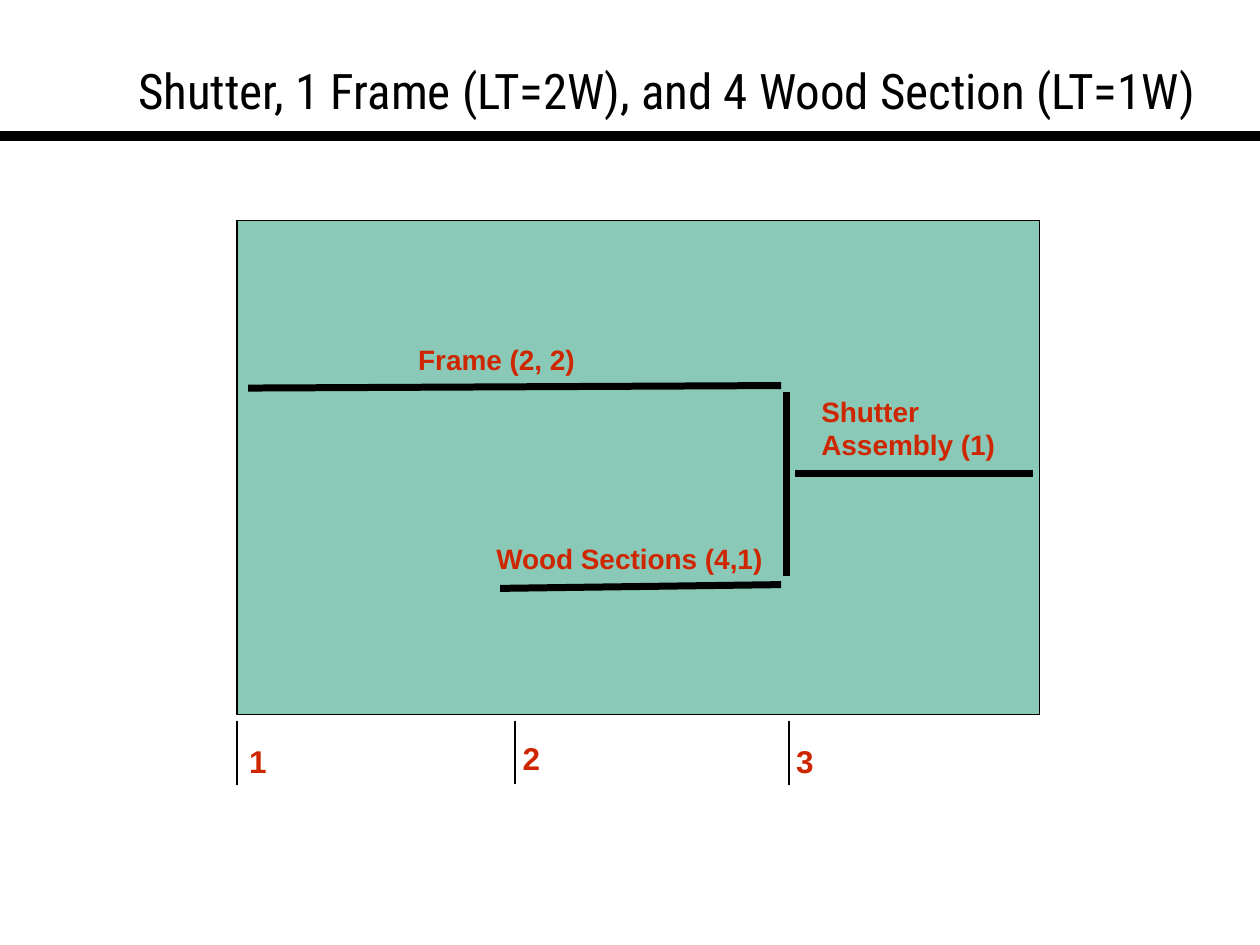
from lxml import etree
from pptx import Presentation
from pptx import util as u
from pptx.dml.color import RGBColor
from pptx.enum import shapes, text
from pptx.oxml.ns import qn

THEME = {
    "black": RGBColor.from_string("000000"),
    "panel": RGBColor.from_string("8AC8B8"),
    "label": RGBColor.from_string("CE2700"),
    "title_font": "Roboto Condensed",
    "label_font": "Arial",
    "title_size": 28,
    "label_size": 16,
    "week_size": 18,
    "thin": 1,
    "bar": 4,
    "rule": 6,
}

TITLE = "Shutter, 1 Frame (LT=2W), and 4 Wood Section (LT=1W)"
TITLE_BOX = (0.58, 0.48, 9.42, 0.52)
RULE = (0, 1.08, 10, 1.08)
PANEL = (1.88, 1.75, 6.37, 3.92)
TICK_TOP = 5.72
WEEKS = [
    ("1", 1.88, 6.23, (1.88, 5.84, 0.34, 0.4)),
    ("2", 4.09, 6.22, (4.05, 5.82, 0.34, 0.4)),
    ("3", 6.26, 6.23, (6.22, 5.84, 0.34, 0.4)),
]
BARS = [
    (3.97, 4.67, 6.2, 4.64),
    (1.97, 3.08, 6.2, 3.06),
    (6.31, 3.76, 8.2, 3.76),
    (6.24, 3.11, 6.24, 4.57),
]
LABELS = [
    ("Frame (2, 2)", (3.22, 2.67, 1.45, 0.36)),
    ("Wood Sections (4,1)", (3.84, 4.25, 2.32, 0.36)),
    ("Shutter\nAssembly (1)", (6.42, 3.08, 1.58, 0.63)),
]


def inches(values):
    return [u.Inches(value) for value in values]


def style_font(paragraph, name, size, color, bold):
    for run in paragraph.runs:
        run.font.name = name
        run.font.size = u.Pt(size)
        run.font.color.rgb = color
        run.font.bold = bold


def add_line(slide, ends, width):
    line = slide.shapes.add_connector(shapes.MSO_CONNECTOR.STRAIGHT, *inches(ends))
    line.line.color.rgb = THEME["black"]
    line.line.width = u.Pt(width)
    etree.SubElement(line.element.spPr, qn("a:effectLst"))


def add_label(slide, wording, box, size):
    frame = slide.shapes.add_textbox(*inches(box)).text_frame
    frame.word_wrap = False
    frame.auto_size = text.MSO_AUTO_SIZE.SHAPE_TO_FIT_TEXT
    frame.text = wording
    for paragraph in frame.paragraphs:
        style_font(paragraph, THEME["label_font"], size, THEME["label"], True)


def add_title(slide):
    title = slide.shapes.title
    title.left, title.top, title.width, title.height = inches(TITLE_BOX)
    frame = title.text_frame
    frame.text = TITLE
    frame.word_wrap = True
    frame.auto_size = text.MSO_AUTO_SIZE.NONE
    frame.vertical_anchor = text.MSO_ANCHOR.BOTTOM
    paragraph = frame.paragraphs[0]
    paragraph.alignment = text.PP_ALIGN.CENTER
    style_font(paragraph, THEME["title_font"], THEME["title_size"], THEME["black"], False)


def add_panel(slide):
    panel = slide.shapes.add_shape(shapes.MSO_SHAPE.RECTANGLE, *inches(PANEL))
    panel.shadow.inherit = False
    panel.fill.solid()
    panel.fill.fore_color.rgb = THEME["panel"]
    panel.line.color.rgb = THEME["black"]
    panel.line.width = u.Pt(THEME["thin"])


def main():
    presentation = Presentation()
    presentation.slide_width, presentation.slide_height = inches((10, 7.5))
    slide = presentation.slides.add_slide(presentation.slide_layouts[5])
    add_line(slide, RULE, THEME["rule"])
    add_title(slide)
    add_panel(slide)
    for week, x, bottom, box in WEEKS:
        add_label(slide, week, box, THEME["week_size"])
        add_line(slide, (x, TICK_TOP, x, bottom), THEME["thin"])
    for ends in BARS:
        add_line(slide, ends, THEME["bar"])
    for wording, box in LABELS:
        add_label(slide, wording, box, THEME["label_size"])
    presentation.save("out.pptx")


if __name__ == "__main__":
    main()
